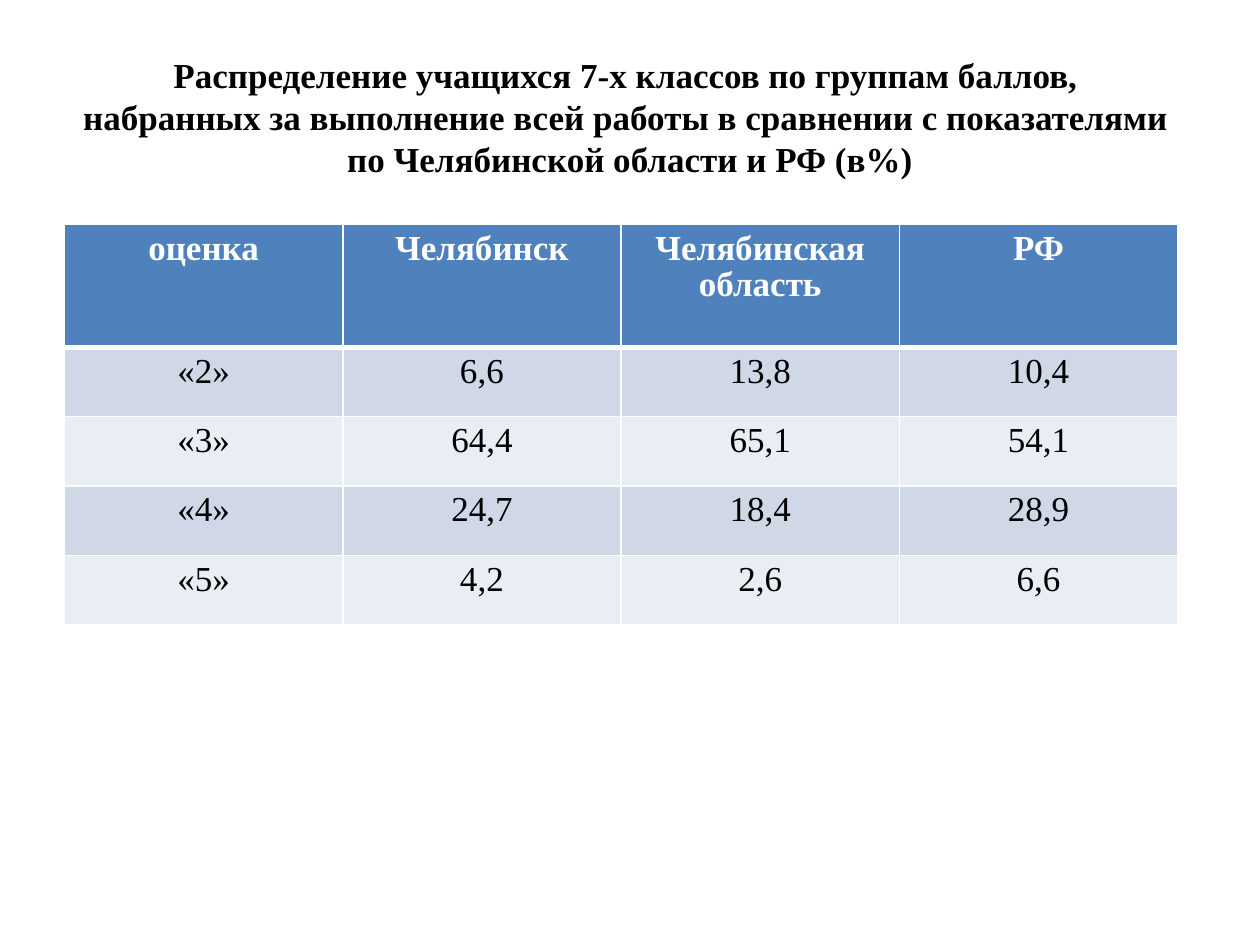
from lxml.etree import SubElement
from pptx import Presentation
from pptx.dml.color import RGBColor
from pptx.enum.text import MSO_ANCHOR, PP_ALIGN
from pptx.oxml.ns import qn
from pptx.util import Cm, Pt

COLORS = {
    "header": "4F81BD",
    "odd_row": "D0D8E8",
    "even_row": "E9EDF4",
    "light": "FFFFFF",
    "dark": "000000",
}
TITLE = (
    "Распределение учащихся 7-х классов по группам баллов, \v"
    "набранных за выполнение всей работы в сравнении с показателями \v"
    "по Челябинской области и РФ (в%)"
)
GRADES = [
    ("оценка", "Челябинск", "Челябинская область", "РФ"),
    ("«2»", "6,6", "13,8", "10,4"),
    ("«3»", "64,4", "65,1", "54,1"),
    ("«4»", "24,7", "18,4", "28,9"),
    ("«5»", "4,2", "2,6", "6,6"),
]
COL_WIDTH = Cm(5.61)
HEADER_HEIGHT, ROW_HEIGHT = Cm(2.48), Cm(1.4)


def write_text(tf, text, color="dark", bold=False, spacing=0.95):
    p = tf.paragraphs[0]
    p.text = text
    p.alignment = PP_ALIGN.CENTER
    p.line_spacing = spacing
    for r in p.runs:
        r.font.name = "Times New Roman"
        r.font.size = Pt(20)
        r.font.bold = bold
        r.font.color.rgb = RGBColor.from_string(COLORS[color])


def add_title(slide):
    title = slide.shapes.title
    title.left, title.top = Cm(1.27), Cm(0.76)
    title.width, title.height = Cm(22.86), Cm(3.18)
    tf = title.text_frame
    tf.word_wrap = True
    tf.vertical_anchor = MSO_ANCHOR.MIDDLE
    write_text(tf, TITLE, bold=True, spacing=Pt(24))


def set_borders(cell, **widths):
    """Draw light borders, given as side=width in points."""
    tc_pr = cell._tc.get_or_add_tcPr()
    for i, (side, width) in enumerate(widths.items()):
        ln = SubElement(tc_pr, qn(f"a:ln{side}"), w=str(Pt(width)))
        fill = SubElement(ln, qn("a:solidFill"))
        SubElement(fill, qn("a:srgbClr"), val=COLORS["light"])
        tc_pr.insert(i, ln)


def add_grade_table(slide):
    n_rows, n_cols = len(GRADES), len(GRADES[0])
    height = HEADER_HEIGHT + ROW_HEIGHT * (n_rows - 1)
    table = slide.shapes.add_table(
        n_rows, n_cols, Cm(1.3), Cm(4.52), COL_WIDTH * n_cols, height
    ).table
    for col in table.columns:
        col.width = COL_WIDTH
    for i, values in enumerate(GRADES):
        is_header = i == 0
        table.rows[i].height = HEADER_HEIGHT if is_header else ROW_HEIGHT
        fill = "header" if is_header else "odd_row" if i % 2 else "even_row"
        for j, value in enumerate(values):
            cell = table.cell(i, j)
            cell.fill.solid()
            cell.fill.fore_color.rgb = RGBColor.from_string(COLORS[fill])
            set_borders(cell, L=1, R=1, T=3 if i == 1 else 1, B=3 if is_header else 1)
            write_text(cell.text_frame, value,
                       color="light" if is_header else "dark", bold=is_header)


def main():
    prs = Presentation()
    prs.slide_width, prs.slide_height = Cm(25.4), Cm(19.05)
    slide = prs.slides.add_slide(prs.slide_layouts[5])
    add_title(slide)
    add_grade_table(slide)
    prs.save("out.pptx")


if __name__ == "__main__":
    main()
